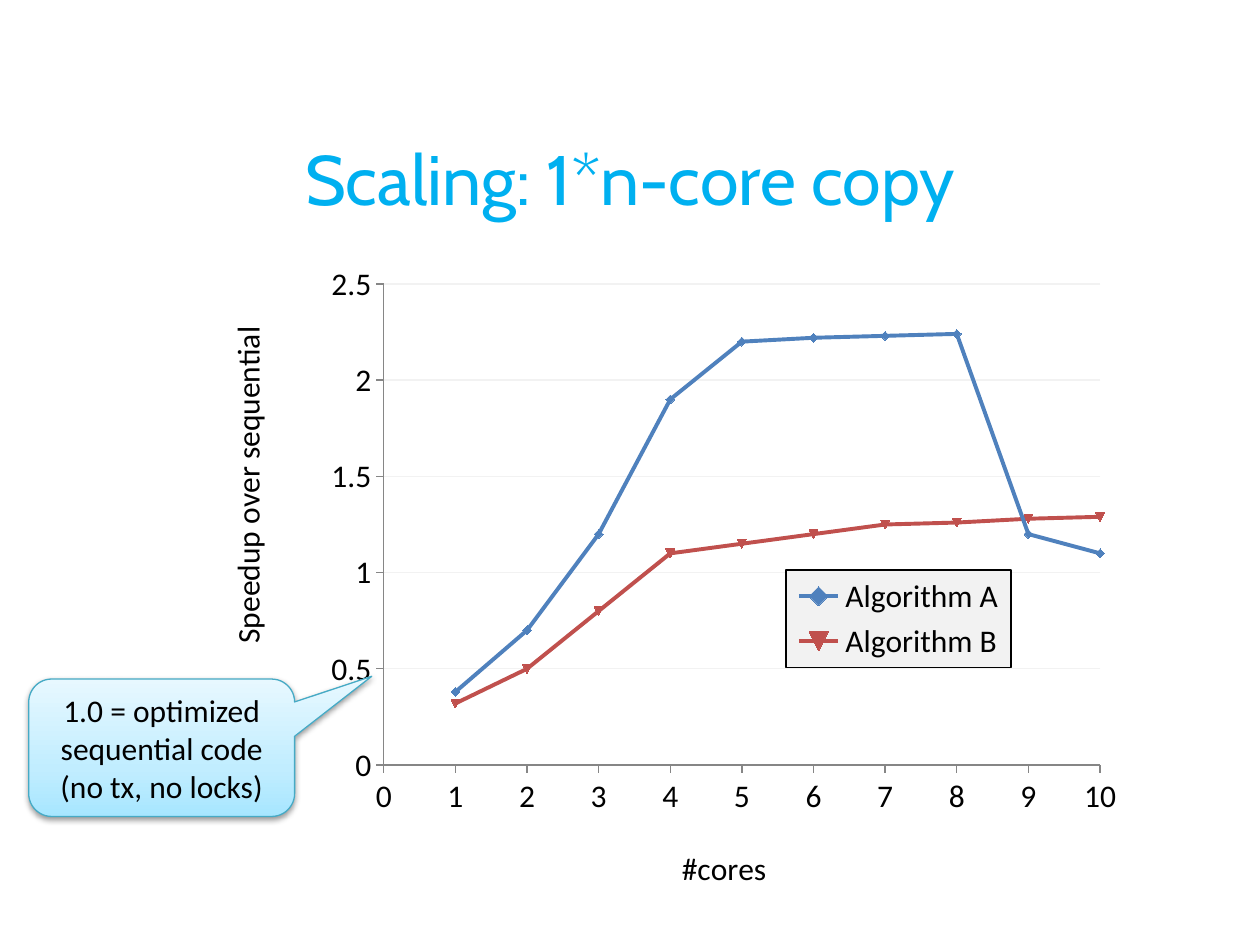
import copy

import pptx
import pptx.chart.data
import pptx.dml.color
import pptx.enum.chart
import pptx.enum.shapes
import pptx.enum.text
import pptx.oxml
import pptx.oxml.ns
import pptx.util
from pptx.util import Cm

RGBColor = pptx.dml.color.RGBColor
qn = pptx.oxml.ns.qn

BLACK = RGBColor(0x00, 0x00, 0x00)
TITLE_BLUE = RGBColor(0x00, 0xB0, 0xF0)
SERIES_BLUE = RGBColor(0x4F, 0x81, 0xBD)
SERIES_RED = RGBColor(0xC0, 0x50, 0x4D)
LIGHT_GREY = RGBColor(0xF2, 0xF2, 0xF2)
AXIS_GREY = RGBColor(0x86, 0x86, 0x86)
CALLOUT_LINE = RGBColor(0x46, 0xAA, 0xC5)
CALLOUT_STOPS = [
    (0, RGBColor(0xA7, 0xE6, 0xFF)),
    (0.35, RGBColor(0xC1, 0xED, 0xFF)),
    (1, RGBColor(0xE7, 0xF8, 0xFF)),
]


def write_text(frame, text, size=18, font="Calibri", color=BLACK):
    """Fill a text frame with centred paragraphs, one per line of text."""
    frame.text = text
    for para in frame.paragraphs:
        para.alignment = pptx.enum.text.PP_ALIGN.CENTER
        for span in para.runs:
            span.font.size = pptx.util.Pt(size)
            span.font.name = font
            span.font.bold = False
            span.font.color.rgb = color


def place(element, target=None, **fractions):
    """Give a chart part a manual layout in fractions of the chart."""
    for old in element.findall(qn("c:layout")):
        element.remove(old)
    inner = f'<c:layoutTarget val="{target}"/>' if target else ""
    inner += '<c:xMode val="edge"/><c:yMode val="edge"/>'
    inner += "".join(f'<c:{key} val="{value}"/>' for key, value in fractions.items())
    layout = pptx.oxml.parse_xml(
        f'<c:layout {pptx.oxml.ns.nsdecls("c")}>'
        f"<c:manualLayout>{inner}</c:manualLayout></c:layout>"
    )
    overlay = element.find(qn("c:overlay"))
    if overlay is None:
        element.insert(0, layout)
    else:
        overlay.addprevious(layout)


deck = pptx.Presentation()
deck.slide_width, deck.slide_height = Cm(25.4), Cm(19.05)
page = deck.slides.add_slide(deck.slide_layouts[5])

# Title
title = page.shapes.title
title.left, title.top, title.width, title.height = Cm(0), Cm(1.98), Cm(25.4), Cm(3.18)
title.text_frame.vertical_anchor = pptx.enum.text.MSO_ANCHOR.MIDDLE
write_text(title.text_frame, "Scaling: 1*n-core copy", size=40, font="Cabin", color=TITLE_BLUE)

# Speedup chart
speedups = {
    "Algorithm A": [0.38, 0.7, 1.2, 1.9, 2.2, 2.22, 2.23, 2.24, 1.2, 1.1],
    "Algorithm B": [0.32, 0.5, 0.8, 1.1, 1.15, 1.2, 1.25, 1.26, 1.28, 1.29],
}
data = pptx.chart.data.XyChartData()
for name, values in speedups.items():
    points = data.add_series(name)
    for cores, speedup in enumerate(values, start=1):
        points.add_data_point(cores, speedup)
chart = page.shapes.add_chart(
    pptx.enum.chart.XL_CHART_TYPE.XY_SCATTER_LINES,
    Cm(3.18), Cm(5.16), Cm(20.9), Cm(13.11), data,
).chart
chart.has_title = False
chart.font.name = "Calibri"
chart.font.size = pptx.util.Pt(18)
chart.font.color.rgb = BLACK
chart.plots[0].vary_by_categories = False
for series, color in zip(chart.plots[0].series, (SERIES_BLUE, SERIES_RED)):
    series.smooth = False
    series.format.line.color.rgb = color
    series.format.line.width = pptx.util.Pt(2.25)
place(chart.plots[0]._element.getparent(), target="inner", x=0.218, y=0.043, w=0.691, h=0.74)

# Axes
for axis, caption, top_value, step, spot in (
    (chart.category_axis, "#cores", 10, 1, {"x": 0.5, "y": 0.9}),
    (chart.value_axis, "Speedup over sequential", 2.5, 0.5, {"x": 0.06, "y": 0.1}),
):
    axis.minimum_scale, axis.maximum_scale, axis.major_unit = 0, top_value, step
    axis.major_tick_mark = pptx.enum.chart.XL_TICK_MARK.OUTSIDE
    axis.tick_labels.number_format = "General"
    axis.tick_labels.number_format_is_linked = False
    axis.format.line.color.rgb = AXIS_GREY
    axis.format.line.width = pptx.util.Pt(0.75)
    axis.has_major_gridlines = False
    write_text(axis.axis_title.text_frame, caption)
    place(axis.axis_title._element, **spot)
chart.value_axis.has_major_gridlines = True
grid_line = chart.value_axis.major_gridlines.format.line
grid_line.color.rgb = LIGHT_GREY
grid_line.width = pptx.util.Pt(0.75)

# Legend
chart.has_legend = True
legend = chart.legend
legend.position = pptx.enum.chart.XL_LEGEND_POSITION.RIGHT
legend.include_in_layout = False
place(legend._element, x=0.606, y=0.483, w=0.217, h=0.15)
legend._element.find(qn("c:overlay")).addnext(pptx.oxml.parse_xml(
    f'<c:spPr {pptx.oxml.ns.nsdecls("c", "a")}>'
    f'<a:solidFill><a:srgbClr val="{LIGHT_GREY}"/></a:solidFill>'
    f'<a:ln w="9525"><a:solidFill><a:srgbClr val="{BLACK}"/></a:solidFill></a:ln></c:spPr>'
))

# Callout
callout = page.shapes.add_shape(
    pptx.enum.shapes.MSO_SHAPE.ROUNDED_RECTANGULAR_CALLOUT,
    Cm(0.58), Cm(13.69), Cm(5.36), Cm(2.77),
)
for index, value in enumerate((0.79, -0.52, 0.167)):
    callout.adjustments[index] = value
callout.line.color.rgb = CALLOUT_LINE
callout.line.width = pptx.util.Pt(0.75)
callout.fill.gradient()
callout.fill.gradient_angle = 90
properties = callout._element.spPr
stop_list = properties.find(qn("a:gradFill")).find(qn("a:gsLst"))
stop_list.append(copy.deepcopy(stop_list[0]))
for stop, (position, color) in zip(callout.fill.gradient_stops, CALLOUT_STOPS):
    stop.position = position
    stop.color.rgb = color
callout.shadow.inherit = False
properties.find(qn("a:effectLst")).append(pptx.oxml.parse_xml(
    f'<a:outerShdw {pptx.oxml.ns.nsdecls("a")} blurRad="40000" dist="20000" dir="5400000"'
    ' rotWithShape="0"><a:srgbClr val="000000"><a:alpha val="38000"/></a:srgbClr></a:outerShdw>'
))
callout.text_frame.word_wrap = True
callout.text_frame.vertical_anchor = pptx.enum.text.MSO_ANCHOR.MIDDLE
write_text(callout.text_frame, "1.0 = optimized sequential code\n(no tx, no locks)")

deck.save("out.pptx")
